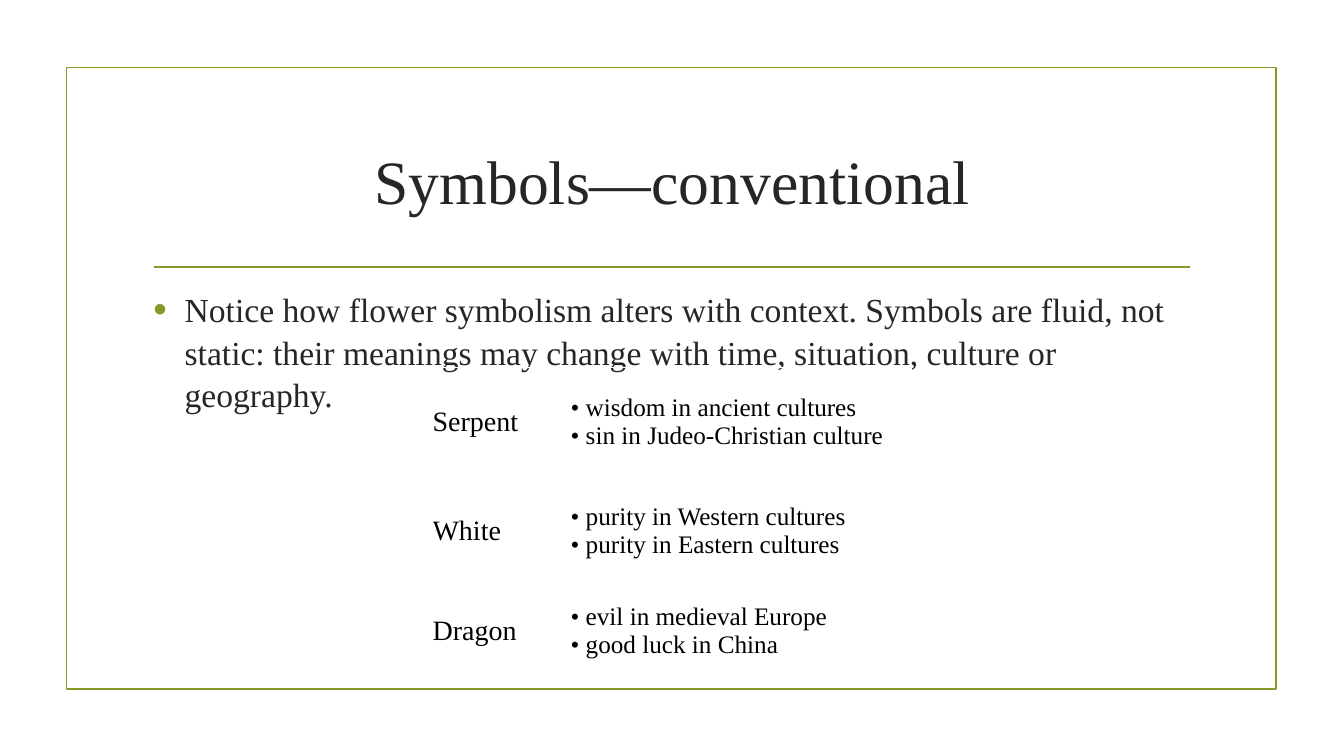
from lxml import etree
from pptx import Presentation
from pptx import util as u
from pptx.dml.color import RGBColor
from pptx.enum import shapes, text
from pptx.oxml import ns


def color(value):
    return RGBColor.from_string(value)


class SymbolSlide:
    """Holds the style and the current slide, and adds each kind of element."""

    FONT = "Times New Roman"
    ACCENT = "83992A"
    INK = "262626"
    BLACK = "000000"

    def __init__(self, presentation):
        self.slide = presentation.slides.add_slide(presentation.slide_layouts[1])

    def place(self, shape, left, top, width, height):
        shape.left, shape.top = u.Cm(left), u.Cm(top)
        shape.width, shape.height = u.Cm(width), u.Cm(height)

    def style(self, paragraph, size, ink):
        paragraph.font.name = self.FONT
        paragraph.font.size = u.Pt(size)
        paragraph.font.color.rgb = color(ink)

    def outline(self, shape):
        shape.line.color.rgb = color(self.ACCENT)
        shape.line.width = u.Pt(1.25)

    def frame(self, left, top, width, height):
        shape = self.slide.shapes.add_shape(
            shapes.MSO_SHAPE.RECTANGLE, u.Cm(left), u.Cm(top), u.Cm(width), u.Cm(height))
        shape.shadow.inherit = False
        shape.fill.background()
        self.outline(shape)

    def rule(self, left, right, y):
        line = self.slide.shapes.add_connector(
            shapes.MSO_CONNECTOR.STRAIGHT, u.Cm(left), u.Cm(y), u.Cm(right), u.Cm(y))
        self.outline(line)
        etree.SubElement(line._element.spPr, ns.qn("a:effectLst"))

    def title(self, wording, *box):
        shape = self.slide.shapes.title
        self.place(shape, *box)
        frame = shape.text_frame
        frame.text = wording
        frame.auto_size = text.MSO_AUTO_SIZE.NONE
        frame.vertical_anchor = text.MSO_ANCHOR.MIDDLE
        paragraph = frame.paragraphs[0]
        paragraph.alignment = text.PP_ALIGN.CENTER
        self.style(paragraph, 44, self.INK)

    def body(self, wording, *box):
        shape = self.slide.placeholders[1]
        self.place(shape, *box)
        frame = shape.text_frame
        frame.text = wording
        frame.auto_size = text.MSO_AUTO_SIZE.NONE
        paragraph = frame.paragraphs[0]
        paragraph.line_spacing = 1.05
        paragraph.space_before = u.Pt(0)
        paragraph.space_after = u.Pt(6)
        self.bullet(paragraph)
        self.style(paragraph, 24, self.INK)

    def bullet(self, paragraph):
        properties = paragraph._p.get_or_add_pPr()
        properties.set("marL", str(u.Cm(0.79)))
        properties.set("indent", str(u.Cm(-0.79)))
        bullet_color = etree.SubElement(properties, ns.qn("a:buClr"))
        etree.SubElement(bullet_color, ns.qn("a:srgbClr"), val=self.ACCENT)
        etree.SubElement(properties, ns.qn("a:buSzPct"), val="115000")
        etree.SubElement(properties, ns.qn("a:buFont"), typeface="Arial")
        etree.SubElement(properties, ns.qn("a:buChar"), char="•")

    def table(self, rows, left, top, widths, heights):
        table = self.slide.shapes.add_table(
            len(rows), len(widths), u.Cm(left), u.Cm(top),
            u.Cm(sum(widths)), u.Cm(sum(heights))).table
        table.first_row = table.horz_banding = False
        for column, width in zip(table.columns, widths):
            column.width = u.Cm(width)
        for row, height, wordings in zip(table.rows, heights, rows):
            row.height = u.Cm(height)
            for cell, wording, size in zip(row.cells, wordings, (20, 18)):
                self.cell(cell, wording, size)

    def cell(self, cell, wording, size):
        cell.fill.background()
        cell.margin_left = cell.margin_right = cell.margin_top = cell.margin_bottom = 0
        cell.vertical_anchor = text.MSO_ANCHOR.MIDDLE
        paragraph = cell.text_frame.paragraphs[0]
        paragraph.text = wording
        self.style(paragraph, size, self.BLACK)


def main():
    presentation = Presentation()
    presentation.slide_width, presentation.slide_height = u.Cm(33.87), u.Cm(19.05)
    slide = SymbolSlide(presentation)
    slide.frame(1.68, 1.7, 30.48, 15.67)
    slide.rule(3.89, 30, 6.73)
    slide.title("Symbols—conventional", 3.61, 2.72, 26.67, 3.63)
    slide.body(
        "Notice how flower symbolism alters with context. Symbols are fluid, not static: "
        "their meanings may change with time, situation, culture or geography.",
        3.61, 7.11, 26.67, 9.22)
    meanings = [
        ("Serpent", "• wisdom in ancient cultures\v• sin in Judeo-Christian culture"),
        ("White", "• purity in Western cultures\v• purity in Eastern cultures"),
        ("Dragon", "• evil in medieval Europe\v• good luck in China"),
    ]
    slide.table(meanings, 10.9, 9.27, (3.48, 8.59), (2.74, 2.74, 2.29))
    presentation.save("out.pptx")


if __name__ == "__main__":
    main()
